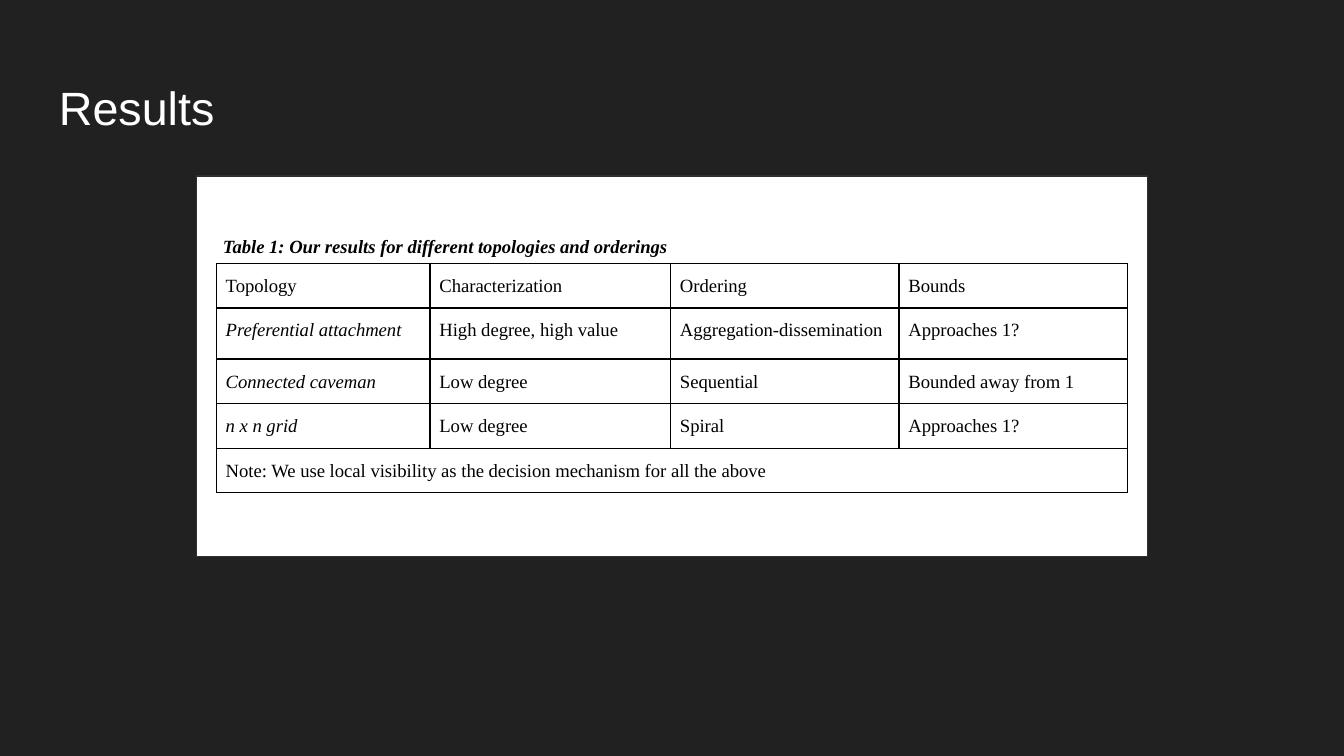
from lxml import etree
from pptx import Presentation
from pptx.dml.color import RGBColor
from pptx.enum import shapes, text
from pptx.oxml import ns
from pptx.util import Inches, Pt

COLORS = {"background": "212121", "title": "FFFFFF", "panel": "FFFFFF",
          "outline": "303030", "ink": "000000"}
SERIF = "Times New Roman"


def write_text(holder, words, size, name, color, inset, spacing=None):
    holder.margin_left = holder.margin_right = Inches(inset)
    holder.margin_top = holder.margin_bottom = Inches(inset)
    frame = getattr(holder, "text_frame", holder)
    frame.word_wrap = True
    para = frame.paragraphs[0]
    para.text = words
    para.font.size = Pt(size)
    para.font.name = name
    para.font.color.rgb = RGBColor.from_string(COLORS[color])
    para.line_spacing = spacing
    return para


def add_borders(cell, widths):
    properties = cell._tc.get_or_add_tcPr()
    for index, (side, width) in enumerate(widths.items()):
        line = etree.Element(ns.qn(f"a:ln{side}"), w=str(Pt(width)))
        fill = etree.SubElement(line, ns.qn("a:solidFill"))
        etree.SubElement(fill, ns.qn("a:srgbClr"), val=COLORS["ink"])
        properties.insert(index, line)


deck = Presentation()
deck.slide_width = Inches(10)
deck.slide_height = deck.slide_width * 9 // 16
page = deck.slides.add_slide(deck.slide_layouts[6])
page.background.fill.solid()
page.background.fill.fore_color.rgb = RGBColor.from_string(COLORS["background"])

title = page.shapes.add_textbox(Inches(0.34), Inches(0.49), Inches(9.32), Inches(0.63))
write_text(title.text_frame, "Results", 25, "Arial", "title", 0.1)

panel = page.shapes.add_shape(shapes.MSO_SHAPE.RECTANGLE, Inches(1.46), Inches(1.31),
                              Inches(7.08), Inches(2.83))
panel.shadow.inherit = False
panel.fill.solid()
panel.fill.fore_color.rgb = RGBColor.from_string(COLORS["panel"])
panel.line.color.rgb = RGBColor.from_string(COLORS["outline"])
panel.line.width = Pt(0.75)

NOTE = "Note: We use local visibility as the decision mechanism for all the above"
rows = [
    ["Topology", "Characterization", "Ordering", "Bounds"],
    ["Preferential attachment", "High degree, high value", "Aggregation-dissemination", "Approaches 1?"],
    ["Connected caveman", "Low degree", "Sequential", "Bounded away from 1"],
    ["n x n grid", "Low degree", "Spiral", "Approaches 1?"],
    [NOTE],
]
column_widths = [1.59, 1.79, 1.7, 1.7]
row_heights = [0.2, 0.38, 0.2, 0.29, 0.19]
rule_widths = [1, 0.75, 1, 1, 0.75, 1]

results = page.shapes.add_table(len(rows), len(column_widths), Inches(1.61), Inches(1.96),
                                Inches(sum(column_widths)), Inches(sum(row_heights))).table
results.first_row = False
results.horz_banding = False
for column, width in zip(results.columns, column_widths):
    column.width = Inches(width)
for row, height in zip(results.rows, row_heights):
    row.height = Inches(height)
results.cell(4, 0).merge(results.cell(4, 3))

for row_index, row in enumerate(rows):
    for column_index in range(len(column_widths)):
        cell = results.cell(row_index, column_index)
        cell.fill.background()
        add_borders(cell, {"L": 1, "R": 1, "T": rule_widths[row_index],
                           "B": rule_widths[row_index + 1]})
        if column_index < len(row):
            para = write_text(cell, row[column_index], 10, SERIF, "ink", 0.07, 1.15)
            para.font.italic = column_index == 0 and 0 < row_index < 4

caption = page.shapes.add_textbox(Inches(1.56), Inches(1.64), Inches(6.22), Inches(0.35))
caption.text_frame.vertical_anchor = text.MSO_ANCHOR.MIDDLE
para = write_text(caption.text_frame, "Table 1: Our results for different topologies and orderings",
                  10, SERIF, "ink", 0.1, 1.15)
para.space_before = Pt(10)
para.font.bold = True
para.font.italic = True

deck.save("out.pptx")
